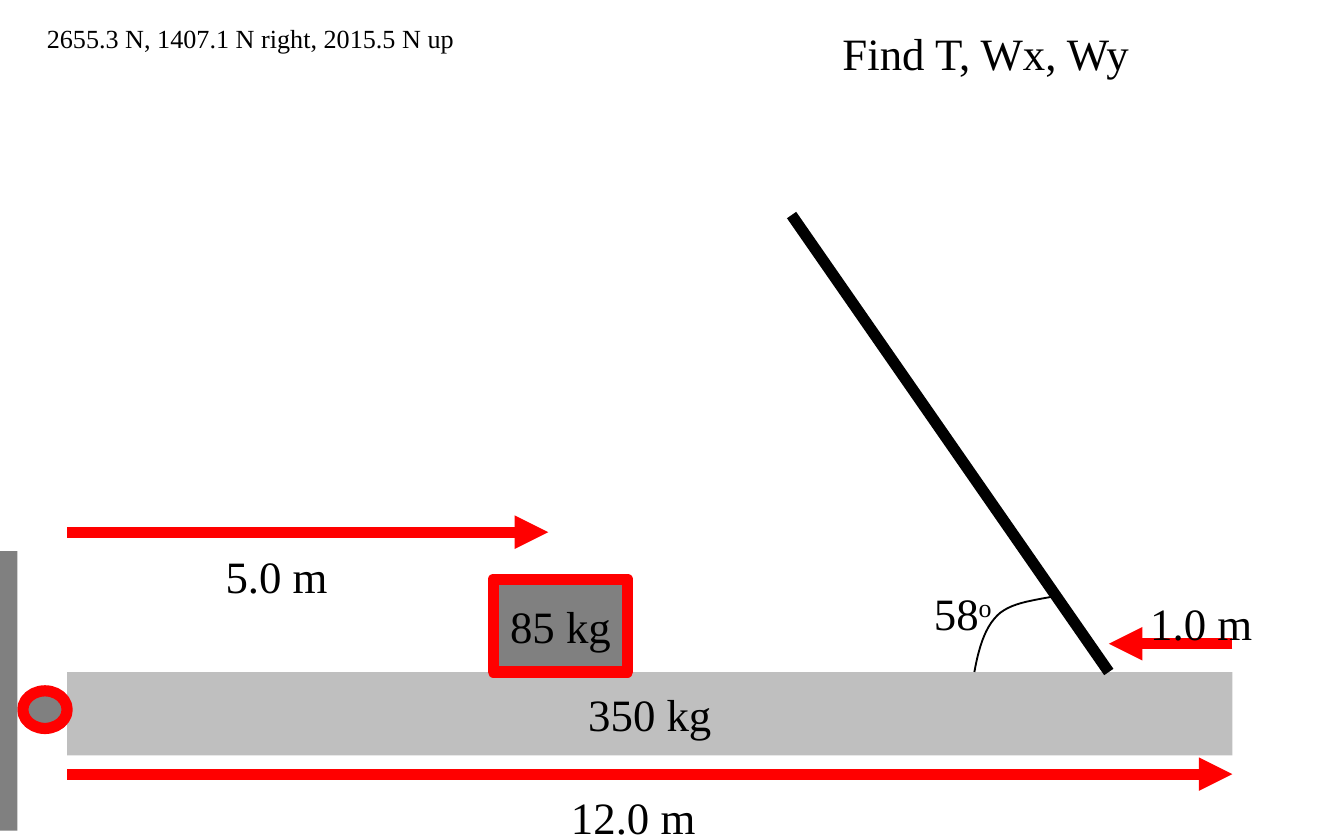
"""Build a statics problem slide: a hinged beam held by a cable."""
from lxml import etree
from pptx import Presentation
from pptx.dml.color import RGBColor
from pptx.enum import shapes, text
from pptx.oxml import ns
from pptx.util import Inches, Pt

COLORS = {"ink": "000000", "beam": "BFBFBF", "steel": "808080", "mark": "FF0000"}
FONT = "Times New Roman"


def color(key):
    return RGBColor.from_string(COLORS[key])


def add_run(paragraph, words, size):
    run = paragraph.add_run()
    run.text = words
    run.font.name = FONT
    run.font.size = Pt(size)
    run.font.color.rgb = color("ink")
    return run


deck = Presentation()
deck.slide_width, deck.slide_height = Inches(10), Inches(6.25)
slide = deck.slides.add_slide(deck.slide_layouts[6])

RECT, OVAL = shapes.MSO_SHAPE.RECTANGLE, shapes.MSO_SHAPE.OVAL
bodies = [
    (RECT, (0.5, 5, 8.67, 0.62), "beam", False, "350 kg"),
    (OVAL, (0.17, 5.14, 0.33, 0.28), "steel", True, ""),
    (RECT, (-0.79, 4.1, 0.92, 2.08), "steel", False, ""),
    (RECT, (3.67, 4.31, 1, 0.69), "steel", True, "85 kg"),
]
for preset, box, fill, outlined, mass in bodies:
    body = slide.shapes.add_shape(preset, *map(Inches, box))
    body.shadow.inherit = False
    body.fill.solid()
    body.fill.fore_color.rgb = color(fill)
    if outlined:
        body.line.color.rgb = color("mark")
        body.line.width = Pt(6)
    else:
        body.line.fill.background()
    if mass:
        frame = body.text_frame
        frame.word_wrap = False
        frame.vertical_anchor = text.MSO_ANCHOR.MIDDLE
        frame.paragraphs[0].alignment = text.PP_ALIGN.CENTER
        add_run(frame.paragraphs[0], mass, 24)

spans = [
    ((8.25, 5, 5.89, 1.6), "ink", False),
    ((0.5, 5.76, 9.17, 5.76), "mark", True),
    ((9.17, 4.79, 8.25, 4.79), "mark", True),
    ((0.5, 3.96, 4.08, 3.96), "mark", True),
]
for ends, stroke, arrow in spans:
    span = slide.shapes.add_connector(shapes.MSO_CONNECTOR.STRAIGHT, *map(Inches, ends))
    span.line.color.rgb = color(stroke)
    span.line.width = Pt(6)
    if arrow:
        etree.SubElement(span.line._get_or_add_ln(), ns.qn("a:tailEnd"), type="triangle")
    etree.SubElement(span._element.spPr, ns.qn("a:effectLst"))

curves = [
    ((7.25, 5), (7.28, 4.84), (7.32, 4.68), (7.42, 4.58)),
    ((7.42, 4.58), (7.51, 4.49), (7.67, 4.47), (7.83, 4.44)),
]
STEPS = 12
arc_points = []
for curve in curves:
    for step in range(1, STEPS + 1):
        t = step / STEPS
        weights = ((1 - t) ** 3, 3 * t * (1 - t) ** 2, 3 * t * t * (1 - t), t ** 3)
        arc_points.append(tuple(
            Inches(sum(w * point[axis] for w, point in zip(weights, curve)))
            for axis in (0, 1)))
arc_path = slide.shapes.build_freeform(Inches(7.25), Inches(5))
arc_path.add_line_segments(arc_points, close=False)
angle_arc = arc_path.convert_to_shape()
angle_arc.shadow.inherit = False
angle_arc.fill.background()
angle_arc.line.color.rgb = color("ink")
angle_arc.line.width = Pt(1)

labels = [
    ((6.85, 4.31, 0.65, 0.5), "58", "o", 24, False),
    ((4.15, 5.83, 1.14, 0.5), "12.0 m", "", 24, False),
    ((8.46, 4.38, 0.97, 0.5), "1.0 m", "", 24, False),
    ((1.58, 4.03, 0.97, 0.5), "5.0 m", "", 24, False),
    ((0.25, 0.12, 3.26, 0.34), "2655.3 N, 1407.1 N right, 2015.5 N up", "", 14, False),
    ((6.17, 0.14, 3.83, 0.5), "Find T, Wx, Wy", "", 24, True),
]
for box, words, superscript, size, wrap in labels:
    frame = slide.shapes.add_textbox(*map(Inches, box)).text_frame
    frame.word_wrap = wrap
    frame.auto_size = text.MSO_AUTO_SIZE.SHAPE_TO_FIT_TEXT
    add_run(frame.paragraphs[0], words, size)
    if superscript:
        raised = add_run(frame.paragraphs[0], superscript, size)
        raised.font._element.set("baseline", "30000")

deck.save("out.pptx")
